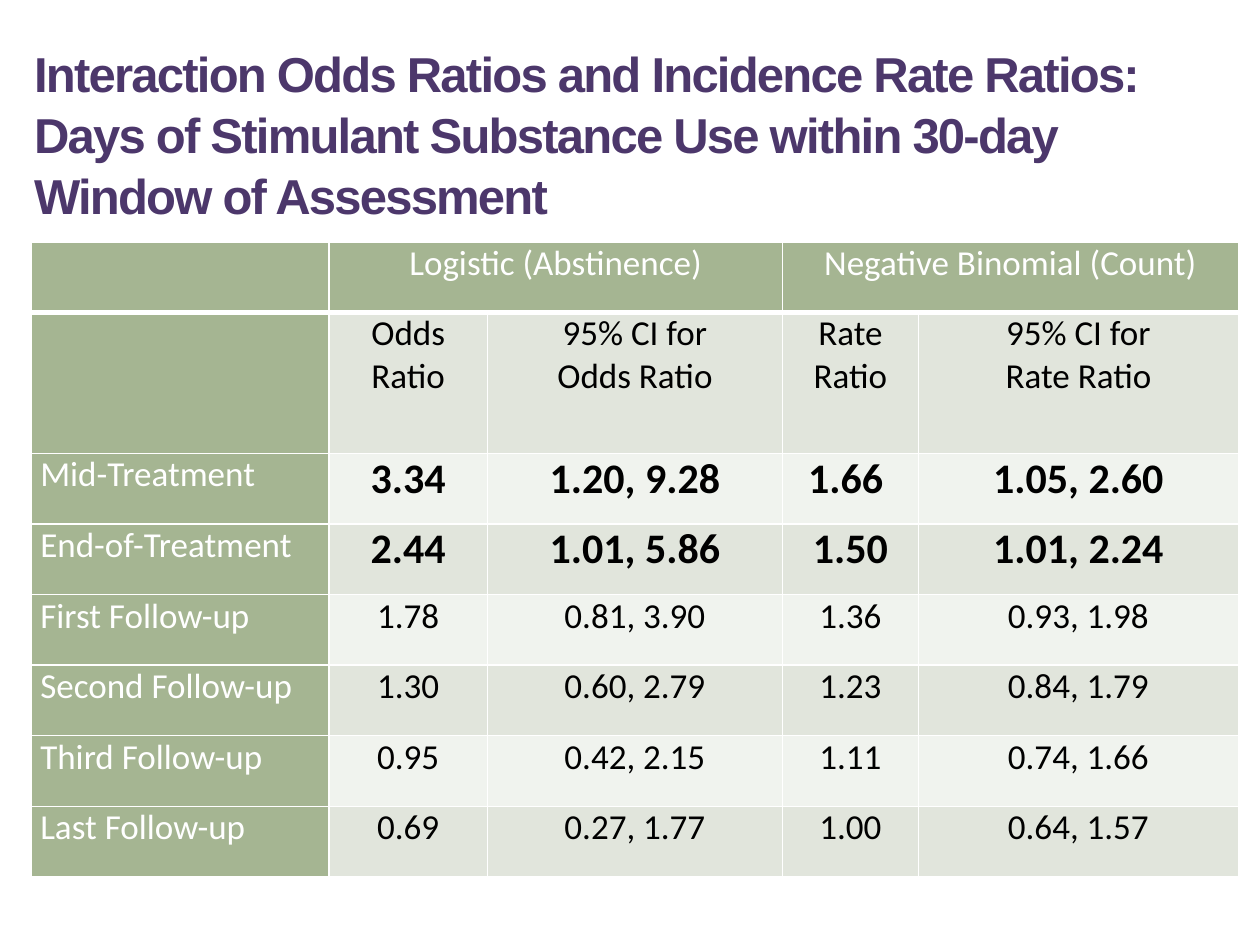
from lxml.etree import SubElement as Sub
from pptx import Presentation
from pptx.dml.color import RGBColor as RGB
from pptx.enum.text import MSO_ANCHOR as Anchor, PP_ALIGN as Align
from pptx.oxml.ns import qn
from pptx.util import Inches, Pt

HUES = {"title": "4C376B", "glow": "E0DDB1", "head": "A5B592", "dark": "E1E5DC",
        "light": "F0F3EE", "white": "FFFFFF", "black": "000000"}
TITLE = ["Interaction Odds Ratios and Incidence Rate Ratios: ",
         "Days of Stimulant Substance Use within 30-day Window of Assessment"]
COLS = [2.36, 1.26, 2.34, 1.08, 2.54]
ROW = 0.56
ROWS = [
    ["", "Logistic (Abstinence)", "", "Negative Binomial (Count)", ""],
    ["", "Odds Ratio", "95% CI for\nOdds Ratio", "Rate Ratio", "95% CI for\nRate Ratio"],
    ["Mid-Treatment", "3.34", "1.20, 9.28", "1.66 ", "1.05, 2.60"],
    ["End-of-Treatment", "2.44", "1.01, 5.86", "1.50", "1.01, 2.24"],
    ["First Follow-up", "1.78", "0.81, 3.90", "1.36", "0.93, 1.98"],
    ["Second Follow-up", "1.30", "0.60, 2.79", "1.23", "0.84, 1.79"],
    ["Third Follow-up", "0.95", "0.42, 2.15", "1.11", "0.74, 1.66"],
    ["Last Follow-up", "0.69", "0.27, 1.77", "1.00", "0.64, 1.57"],
]
BOLD = (2, 3)


def add_run(para, text, font, size, hue, bold=False):
    run = para.add_run()
    run.text = text
    run.font.name, run.font.size, run.font.bold = font, Pt(size), bold
    run.font.color.rgb = RGB.from_string(HUES[hue])
    return run


def add_line(props, tag, hue, width):
    """Add a solid line to the properties and return its colour element."""
    line = Sub(props, qn(tag), w=str(Pt(width)))
    return Sub(Sub(line, qn("a:solidFill")), qn("a:srgbClr"), val=HUES[hue])


def trim(run):
    """Tighten the letters and give them a faint outline."""
    props = run.font._element
    props.set("spc", "-100")
    color = add_line(props, "a:ln", "glow", 0.25)
    Sub(color, qn("a:alpha"), val="25000")
    props.insert(0, color.getparent().getparent())


def add_title(slide):
    box = slide.shapes.title
    box.left, box.top, box.width, box.height = map(Inches, (0.17, 0.33, 9.67, 1.5))
    frame = box.text_frame
    frame.vertical_anchor, frame.word_wrap = Anchor.BOTTOM, True
    para = frame.paragraphs[0]
    para.alignment, para.line_spacing = Align.LEFT, 1.04
    for i, text in enumerate(TITLE):
        if i:
            para.add_line_break()
        trim(add_run(para, text, "Arial", 28, "title", True))


def fill_cell(cell, text, row, col):
    head = row == 0 or col == 0
    bold = row in BOLD and not head
    cell.margin_left = cell.margin_right = Inches(0.07)
    cell.margin_top = cell.margin_bottom = 0
    props = cell._tc.get_or_add_tcPr()
    for side in "LRTB":
        add_line(props, "a:ln" + side, "white", 3 if row == 0 and side == "B" else 1)
    cell.fill.solid()
    hue = "head" if head else "dark" if row % 2 else "light"
    cell.fill.fore_color.rgb = RGB.from_string(HUES[hue])
    frame = cell.text_frame
    for i, line in enumerate(text.split("\n")):
        para = frame.add_paragraph() if i else frame.paragraphs[0]
        para.alignment = Align.CENTER if col else Align.LEFT
        if line:
            add_run(para, line, "Calibri", 24 if bold else 20,
                    "white" if head else "black", bold)


def add_grid(slide):
    high = ROW * (len(ROWS) + 1)
    grid = slide.shapes.add_table(len(ROWS), len(COLS), Inches(0.25), Inches(1.92),
                                  Inches(sum(COLS)), Inches(high)).table
    for col, wide in zip(grid.columns, COLS):
        col.width = Inches(wide)
    for r, texts in enumerate(ROWS):
        grid.rows[r].height = Inches(ROW * (2 if r == 1 else 1))
        for c, text in enumerate(texts):
            fill_cell(grid.cell(r, c), text, r, c)
    for c in (1, 3):
        grid.cell(0, c).merge(grid.cell(0, c + 1))


def main():
    deck = Presentation()
    deck.slide_width, deck.slide_height = Inches(10), Inches(7.5)
    slide = deck.slides.add_slide(deck.slide_layouts[5])
    add_title(slide)
    add_grid(slide)
    deck.save("out.pptx")


if __name__ == "__main__":
    main()
